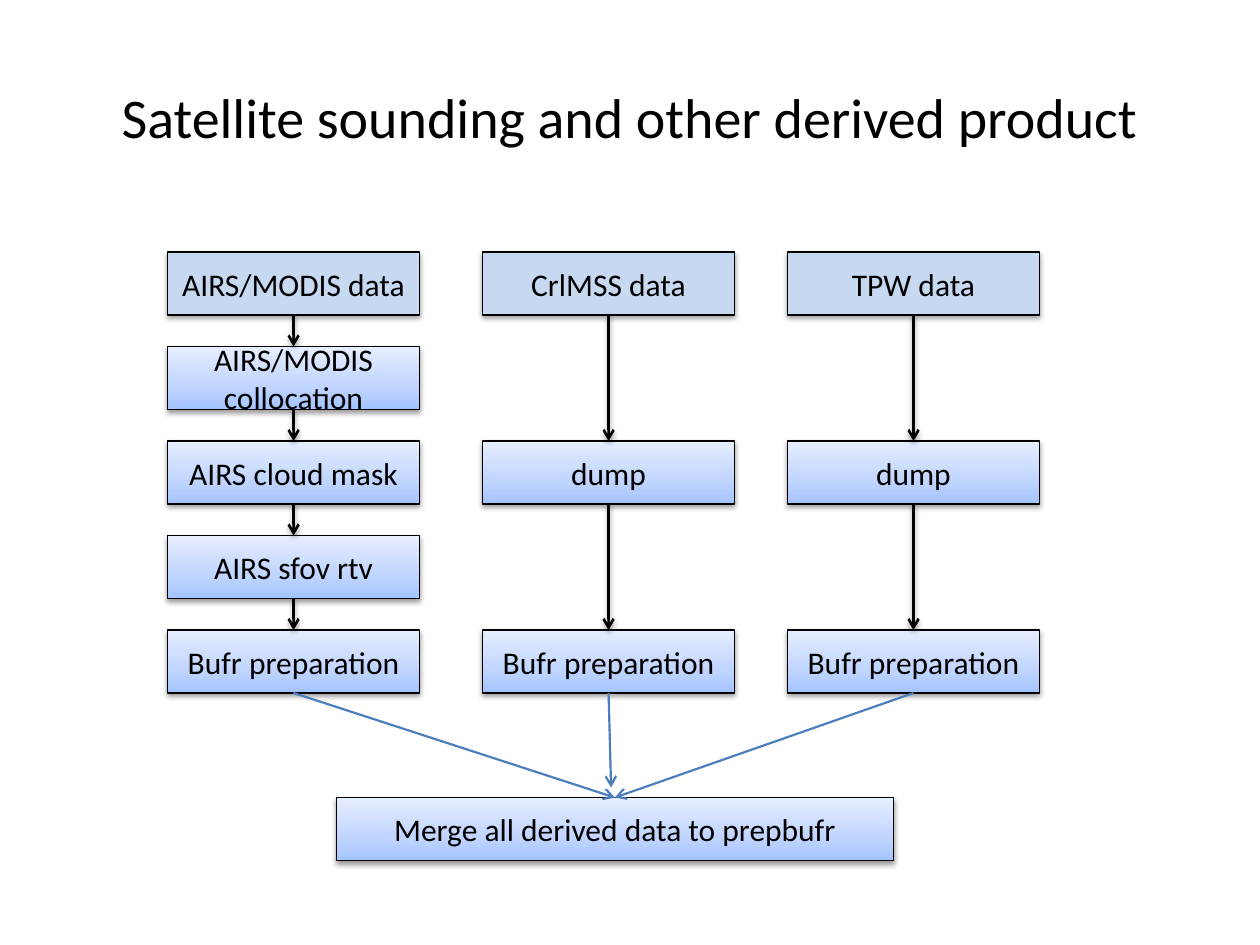
from lxml.etree import SubElement
from pptx import Presentation
from pptx.dml.color import RGBColor
from pptx.enum.shapes import MSO_CONNECTOR, MSO_SHAPE
from pptx.enum.text import MSO_ANCHOR, PP_ALIGN
from pptx.oxml.ns import qn
from pptx.util import Inches, Pt

COLORS = {"ink": "000000", "data": "C6D9F1", "merge_line": "4B7EBC"}
GRADIENT = {0: "A4C4FF", 35: "BFD4FF", 100: "E6EEFF"}
SHADOW = {"blurRad": "40000", "dist": "20000", "dir": "5400000", "rotWithShape": "0"}
BOX_W, BOX_H = 2, 0.5
TOP, ROW_STEP = 2, 0.75
BOTTOM, TOP_SIDE = 2, 0

# Left edge of each column, then its steps as (row, text)
COLUMNS = [
    (1.33, [(0, "AIRS/MODIS data"), (1, "AIRS/MODIS collocation"),
            (2, "AIRS cloud mask"), (3, "AIRS sfov rtv"), (4, "Bufr preparation")]),
    (3.83, [(0, "CrlMSS data"), (2, "dump"), (4, "Bufr preparation")]),
    (6.25, [(0, "TPW data"), (2, "dump"), (4, "Bufr preparation")]),
]

prs = Presentation()
prs.slide_width, prs.slide_height = Inches(10), Inches(7.5)
s = prs.slides.add_slide(prs.slide_layouts[5])


def write(tf, text, size):
    tf.word_wrap = True
    tf.vertical_anchor = MSO_ANCHOR.MIDDLE
    p = tf.paragraphs[0]
    p.alignment = PP_ALIGN.CENTER
    r = p.add_run()
    r.text = text
    for name, value in {"size": Pt(size), "name": "Calibri"}.items():
        setattr(r.font, name, value)
    r.font.color.rgb = RGBColor.from_string(COLORS["ink"])


def finish(shape, color, width, shadow=True):
    """Set the outline, and a soft shadow or none."""
    shape.line.color.rgb = RGBColor.from_string(COLORS[color])
    shape.line.width = Pt(width)
    effects = SubElement(shape._element.spPr, qn("a:effectLst"))
    if shadow:
        outer = SubElement(effects, qn("a:outerShdw"), SHADOW)
        black = SubElement(outer, qn("a:srgbClr"), val=COLORS["ink"])
        SubElement(black, qn("a:alpha"), val="38000")


title = s.shapes.title
title.left, title.top, title.width, title.height = map(Inches, (0.5, 0.3, 9, 1.25))
write(title.text_frame, "Satellite sounding and other derived product", 32)

# Boxes
specs = [(left, TOP + row * ROW_STEP, BOX_W, text)
         for left, steps in COLUMNS for row, text in steps]
specs.append((2.67, 6.33, 4.42, "Merge all derived data to prepbufr"))
boxes = []
for left, top, width, text in specs:
    box = s.shapes.add_shape(MSO_SHAPE.FLOWCHART_PROCESS, Inches(left), Inches(top),
                             Inches(width), Inches(BOX_H))
    if top == TOP:
        box.fill.solid()
        box.fill.fore_color.rgb = RGBColor.from_string(COLORS["data"])
    else:
        box.fill.gradient()
        box.fill.gradient_angle = 90
        stops = box._element.spPr.find(".//" + qn("a:gsLst"))
        for stop in list(stops):
            stops.remove(stop)
        for percent, color in GRADIENT.items():
            stop = SubElement(stops, qn("a:gs"), pos=str(percent * 1000))
            SubElement(stop, qn("a:srgbClr"), val=color)
    finish(box, "ink", 0.75)
    write(box.text_frame, text, 18)
    boxes.append(box)

# Arrows: the last box of each column leads to the merge box
merge = boxes.pop()
remaining = iter(boxes)
links = []
for left, steps in COLUMNS:
    column = [next(remaining) for step in steps]
    links += [(a, b, "ink", 1.5) for a, b in zip(column, column[1:])]
    links.append((column[-1], merge, "merge_line", 1.25))

middle_column_left = Inches(COLUMNS[1][0])
for start, end, color, width in links:
    arrow = s.shapes.add_connector(MSO_CONNECTOR.STRAIGHT, 0, 0, Inches(4.85), Inches(6.25))
    arrow.begin_connect(start, BOTTOM)
    # The middle arrow stops just above the merge box
    if end is not merge or start.left != middle_column_left:
        arrow.end_connect(end, TOP_SIDE)
    finish(arrow, color, width, shadow=end is not merge)
    SubElement(arrow.line._get_or_add_ln(), qn("a:tailEnd"), type="arrow")

prs.save("out.pptx")
